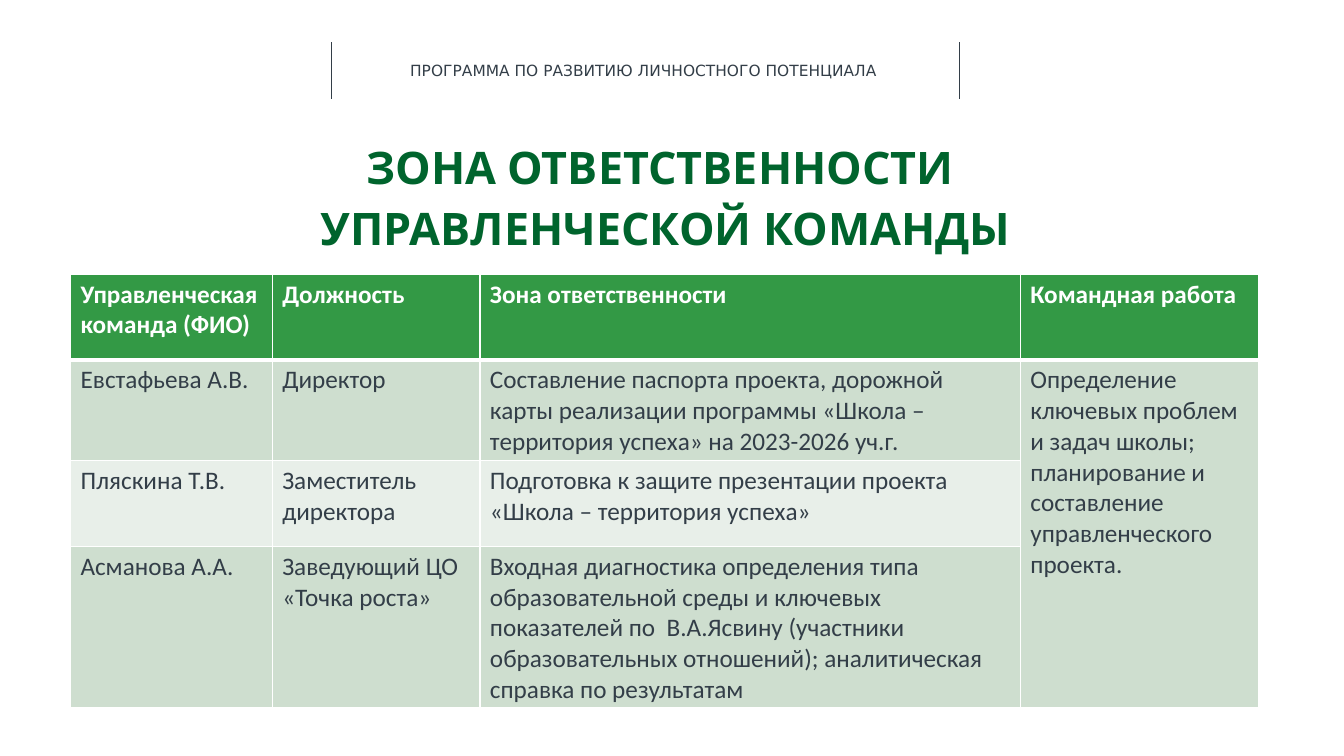
from lxml import etree
from pptx import Presentation
from pptx.dml.color import RGBColor
from pptx.enum.shapes import MSO_CONNECTOR
from pptx.enum.text import MSO_ANCHOR, MSO_AUTO_SIZE, PP_ALIGN
from pptx.oxml.ns import qn
from pptx.util import Inches, Pt

WHITE = RGBColor(0xFF, 0xFF, 0xFF)
SLATE = RGBColor(0x33, 0x3E, 0x48)
DARK_GREEN = RGBColor(0x00, 0x64, 0x2D)
HEADER_GREEN = RGBColor(0x33, 0x99, 0x45)
BAND_DARK = RGBColor(0xCE, 0xDE, 0xCF)
BAND_LIGHT = RGBColor(0xE8, 0xEF, 0xE9)

HEADING = "ПРОГРАММА ПО РАЗВИТИЮ ЛИЧНОСТНОГО ПОТЕНЦИАЛА"
TITLE = "ЗОНА ОТВЕТСТВЕННОСТИ \nУПРАВЛЕНЧЕСКОЙ КОМАНДЫ"
COLUMN_WIDTHS = (2, 2.06, 5.36, 2.36)
ROW_HEIGHT = 0.85
TEAM_ROWS = (
    ("Управленческая команда (ФИО)", "Должность", "Зона ответственности", "Командная работа"),
    ("Евстафьева А.В.", "Директор",
     "Составление паспорта проекта, дорожной карты реализации программы "
     "«Школа – территория успеха» на 2023-2026 уч.г.",
     "Определение ключевых проблем и задач школы; планирование и составление "
     "управленческого проекта."),
    ("Пляскина Т.В.", "Заместитель директора",
     "Подготовка к защите презентации проекта «Школа – территория успеха»", ""),
    ("Асманова А.А.", "Заведующий ЦО «Точка роста»",
     "Входная диагностика определения типа образовательной среды и ключевых "
     "показателей по  В.А.Ясвину (участники образовательных отношений); "
     "аналитическая справка по результатам", ""),
)


class SlideBuilder:
    """Holds the fonts and the current slide."""

    heading_font = "DejaVu Sans"
    title_font = "Karla"
    table_font = "Calibri"

    def __init__(self, page):
        self.page = page

    def format_runs(self, frame, font_name, size, color, bold=False):
        for para in frame.paragraphs:
            for span in para.runs:
                span.font.name = font_name
                span.font.size = Pt(size)
                span.font.bold = bold
                span.font.color.rgb = color

    def vertical_rule(self, left, top, bottom):
        rule = self.page.shapes.add_connector(
            MSO_CONNECTOR.STRAIGHT, Inches(left), Inches(top), Inches(left), Inches(bottom))
        rule.line.color.rgb = SLATE
        rule.line.width = Pt(0.5)
        etree.SubElement(rule._element.spPr, qn("a:effectLst"))

    def heading(self, text, left, top, width, height):
        box = self.page.shapes.add_textbox(
            Inches(left), Inches(top), Inches(width), Inches(height))
        frame = box.text_frame
        frame.word_wrap = True
        frame.auto_size = MSO_AUTO_SIZE.SHAPE_TO_FIT_TEXT
        frame.text = text
        self.format_runs(frame, self.heading_font, 11, SLATE)

    def title(self, text, left, top, width, height):
        box = self.page.shapes.title
        box.left, box.top = Inches(left), Inches(top)
        box.width, box.height = Inches(width), Inches(height)
        frame = box.text_frame
        frame.margin_left = frame.margin_right = frame.margin_top = frame.margin_bottom = 0
        frame.vertical_anchor = MSO_ANCHOR.MIDDLE
        frame.auto_size = MSO_AUTO_SIZE.NONE
        frame.text = text
        for index, para in enumerate(frame.paragraphs):
            para.alignment = PP_ALIGN.CENTER
            para.line_spacing = 0.9
            para.space_before = Pt(9 if index else 0)
        self.format_runs(frame, self.title_font, 32, DARK_GREEN, bold=True)

    def cell_borders(self, cell, bottom_width):
        properties = cell._tc.get_or_add_tcPr()
        widths = {"a:lnL": 1, "a:lnR": 1, "a:lnT": 1, "a:lnB": bottom_width}
        for position, (tag, width) in enumerate(widths.items()):
            line = etree.Element(qn(tag), w=str(Pt(width)))
            fill = etree.SubElement(line, qn("a:solidFill"))
            etree.SubElement(fill, qn("a:srgbClr"), val=str(WHITE))
            properties.insert(position, line)

    def table(self, rows, left, top):
        table = self.page.shapes.add_table(
            len(rows), len(COLUMN_WIDTHS), Inches(left), Inches(top),
            Inches(sum(COLUMN_WIDTHS)), Inches(ROW_HEIGHT * len(rows))).table
        for column, width in zip(table.columns, COLUMN_WIDTHS):
            column.width = Inches(width)
        for row_index, texts in enumerate(rows):
            is_header = row_index == 0
            band = BAND_DARK if row_index % 2 else BAND_LIGHT
            for column_index, text in enumerate(texts):
                cell = table.cell(row_index, column_index)
                cell.text = text
                cell.fill.solid()
                cell.fill.fore_color.rgb = HEADER_GREEN if is_header else band
                self.format_runs(cell.text_frame, self.table_font, 18,
                                 WHITE if is_header else SLATE, bold=is_header)
                self.cell_borders(cell, bottom_width=3 if is_header else 1)
        # Teamwork is shared by all members
        last_column = len(COLUMN_WIDTHS) - 1
        table.cell(1, last_column).merge(table.cell(len(rows) - 1, last_column))


def main():
    deck = Presentation()
    deck.slide_width, deck.slide_height = Inches(13.33), Inches(7.5)
    builder = SlideBuilder(deck.slides.add_slide(deck.slide_layouts[5]))

    # Programme heading between two rules
    for left in (3.29, 9.52):
        builder.vertical_rule(left, 0.42, 0.98)
    builder.heading(HEADING, 3.97, 0.56, 4.87, 0.29)

    # Title and responsibilities
    builder.title(TITLE, -0.05, 1.41, 13.31, 1.15)
    builder.table(TEAM_ROWS, 0.7, 2.72)

    deck.save("out.pptx")


if __name__ == "__main__":
    main()
